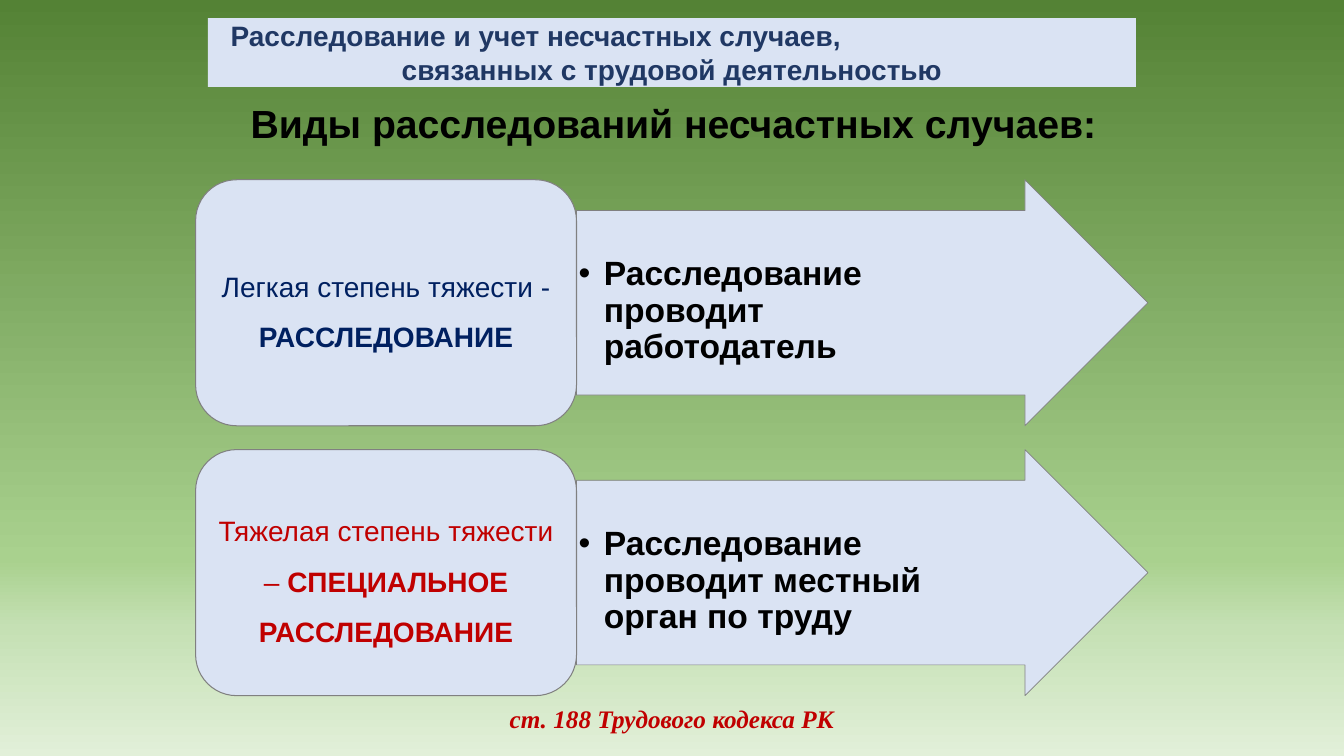
from lxml.etree import SubElement
from pptx import Presentation
from pptx.dml.color import RGBColor
from pptx.enum.shapes import MSO_SHAPE
from pptx.enum.text import MSO_ANCHOR, PP_ALIGN
from pptx.oxml.ns import qn
from pptx.util import Cm, Pt

COLORS = {
    "panel": "DAE3F3",
    "outline": "808080",
    "black": "000000",
    "heading": "203864",
    "navy": "002060",
    "red": "C00000",
}
BACKGROUND_STOPS = [(0, "548235"), (74, "A9D18E"), (83, "C5E0B4"), (100, "E2F0D9")]


def add_panel(kind, left, top, width, height, line_width=None):
    shape = slide.shapes.add_shape(kind, Cm(left), Cm(top), Cm(width), Cm(height))
    shape.shadow.inherit = False
    shape.fill.solid()
    shape.fill.fore_color.rgb = RGBColor.from_string(COLORS["panel"])
    if line_width:
        shape.line.color.rgb = RGBColor.from_string(COLORS["outline"])
        shape.line.width = Pt(line_width)
    else:
        shape.line.fill.background()
    shape.text_frame.word_wrap = True
    return shape


def format_runs(paragraph, size, color, alignment=PP_ALIGN.CENTER, bold=True, font_name="Arial"):
    paragraph.alignment = alignment
    for run in paragraph.runs:
        run.font.name = font_name
        run.font.size = Pt(size)
        run.font.bold = bold
        run.font.color.rgb = RGBColor.from_string(COLORS[color])


presentation = Presentation()
presentation.slide_width = Cm(33.87)
presentation.slide_height = Cm(19.05)
slide = presentation.slides.add_slide(presentation.slide_layouts[6])

# Background gradient, top to bottom
background_fill = slide.background.fill
background_fill.gradient()
background_fill.gradient_angle = 270
stop_list = slide.element.find(".//" + qn("a:gsLst"))
for old_stop in list(stop_list):
    stop_list.remove(old_stop)
for position, color in BACKGROUND_STOPS:
    stop = SubElement(stop_list, qn("a:gs"), pos=str(position * 1000))
    SubElement(stop, qn("a:srgbClr"), val=color)

# Title
title = slide.shapes.add_textbox(Cm(5.54), Cm(1.73), Cm(22.86), Cm(2.16))
title.text_frame.word_wrap = True
title.text_frame.vertical_anchor = MSO_ANCHOR.MIDDLE
paragraph = title.text_frame.paragraphs[0]
paragraph.text = "Виды расследований несчастных случаев:"
paragraph.line_spacing = 1.5
format_runs(paragraph, 28, "black")

# Rows: severity on the left, investigator in the arrow
rows = [
    ("Легкая степень тяжести - ", "РАССЛЕДОВАНИЕ", "navy",
     "Расследование проводит работодатель"),
    ("Тяжелая степень тяжести – ", "СПЕЦИАЛЬНОЕ РАССЛЕДОВАНИЕ", "red",
     "Расследование проводит местный орган по труду"),
]
for index, (severity, investigation, color, investigator) in enumerate(rows):
    top = 4.53 + index * 6.8

    arrow = add_panel(MSO_SHAPE.RIGHT_ARROW, 14.53, top, 14.4, 6.2, 0.5)
    arrow.adjustments[0] = 0.75
    arrow.adjustments[1] = 0.5
    text_frame = arrow.text_frame
    text_frame.vertical_anchor = MSO_ANCHOR.TOP
    text_frame.margin_left = text_frame.margin_bottom = Cm(0.05)
    text_frame.margin_top = Cm(1.17)
    text_frame.margin_right = Cm(1.6)
    paragraph = text_frame.paragraphs[0]
    paragraph.text = investigator
    paragraph.line_spacing = 0.9
    format_runs(paragraph, 24, "black", PP_ALIGN.LEFT)
    properties = paragraph._p.get_or_add_pPr()
    properties.set("marL", str(Cm(0.64)))
    properties.set("indent", str(Cm(-0.64)))
    SubElement(properties, qn("a:buFont"), typeface="Arial")
    SubElement(properties, qn("a:buChar"), char="•")

    card = add_panel(MSO_SHAPE.ROUNDED_RECTANGLE, 4.93, top, 9.6, 6.2, 0.75)
    text_frame = card.text_frame
    text_frame.vertical_anchor = MSO_ANCHOR.MIDDLE
    text_frame.margin_left = text_frame.margin_right = Cm(0.2)
    text_frame.margin_top = text_frame.margin_bottom = Cm(0.1)
    paragraph = text_frame.paragraphs[0]
    paragraph.line_spacing = 1.5
    paragraph.text = severity
    paragraph.add_run().text = investigation
    format_runs(paragraph, 20, color, bold=False)
    paragraph.runs[1].font.bold = True

# Header band
header = add_panel(MSO_SHAPE.RECTANGLE, 5.24, 0.46, 23.39, 1.73)
header.text_frame.vertical_anchor = MSO_ANCHOR.MIDDLE
header.text_frame.text = "Расследование и учет несчастных случаев,\nсвязанных с трудовой деятельностью"
first_line, second_line = header.text_frame.paragraphs
format_runs(first_line, 20, "heading", PP_ALIGN.LEFT)
first_line._p.get_or_add_pPr().set("marL", str(Cm(0.32)))
format_runs(second_line, 20, "heading")

# Legal reference
reference = slide.shapes.add_textbox(Cm(8.46), Cm(17.6), Cm(16.94), Cm(1.02))
reference.text_frame.word_wrap = True
paragraph = reference.text_frame.paragraphs[0]
paragraph.text = "ст. 188 Трудового кодекса РК"
format_runs(paragraph, 18, "red", font_name="Times New Roman")
paragraph.runs[0].font.italic = True

presentation.save("out.pptx")
